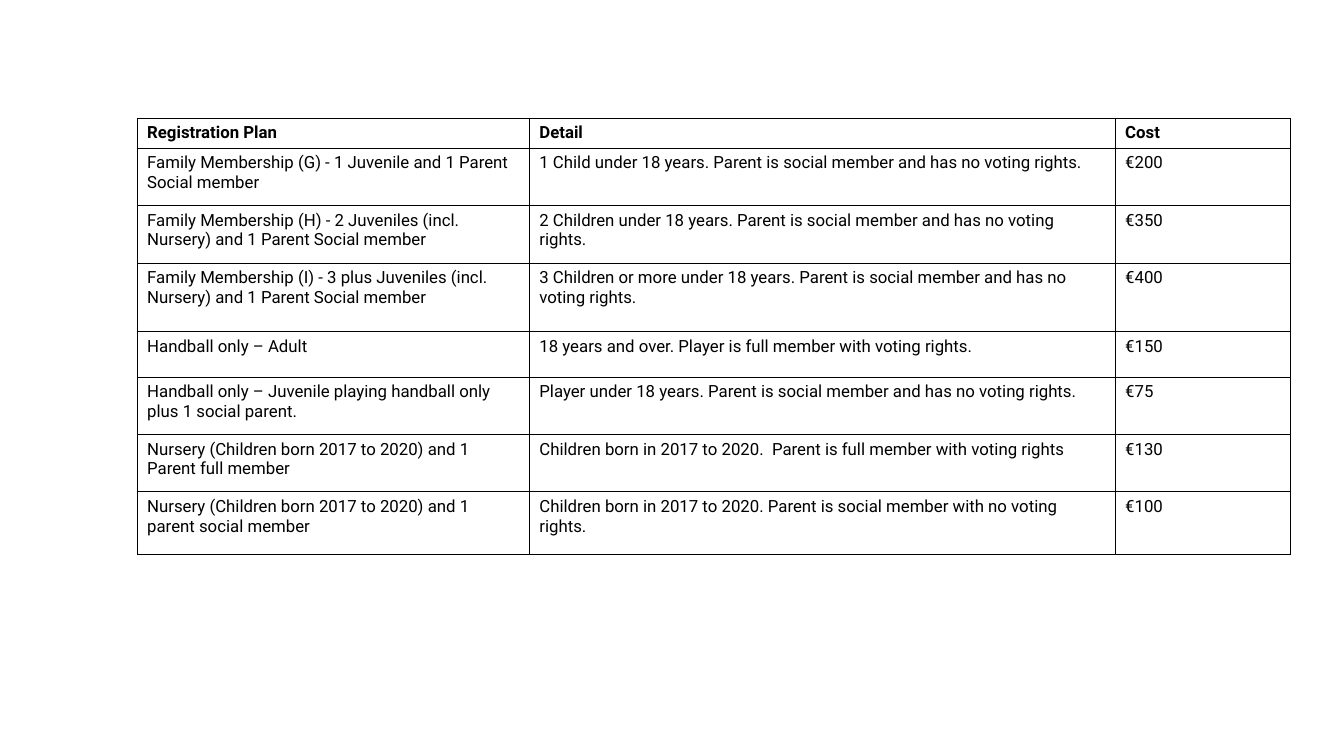
from pptx import Presentation
from pptx.dml.color import RGBColor
from pptx.oxml import parse_xml
from pptx.oxml.ns import nsdecls
from pptx.util import Inches, Pt

BLACK = RGBColor(0, 0, 0)
WHITE = RGBColor(255, 255, 255)
FONT = "Roboto"
EDGE = Pt(0.57)

WIDTHS = [3.89, 5.81, 1.74]
HEIGHTS = [0.3, 0.57, 0.57, 0.68, 0.45, 0.57, 0.57, 0.62]
PLANS = [
    ("Registration Plan", "Detail", "Cost"),
    ("Family Membership (G) - 1 Juvenile and 1 Parent Social member",
     "1 Child under 18 years. Parent is social member and has no voting rights.",
     "€200"),
    ("Family Membership (H) - 2 Juveniles (incl. Nursery) and 1 Parent Social member",
     "2 Children under 18 years. Parent is social member and has no voting rights.",
     "€350"),
    ("Family Membership (I) - 3 plus Juveniles (incl. Nursery) and 1 Parent Social member",
     "3 Children or more under 18 years. Parent is social member and has no voting rights.",
     "€400"),
    ("Handball only – Adult",
     "18 years and over. Player is full member with voting rights.",
     "€150"),
    ("Handball only – Juvenile playing handball only plus 1 social parent.",
     "Player under 18 years. Parent is social member and has no voting rights.",
     "€75"),
    ("Nursery (Children born 2017 to 2020) and 1 Parent full member",
     "Children born in 2017 to 2020.  Parent is full member with voting rights",
     "€130"),
    ("Nursery (Children born 2017 to 2020) and 1 parent social member",
     "Children born in 2017 to 2020. Parent is social member with no voting rights.",
     "€100"),
]


def add_edges(cell):
    # Borders must come before the fill in the cell properties
    props = cell._tc.get_or_add_tcPr()
    for pos, side in enumerate(("lnL", "lnR", "lnT", "lnB")):
        props.insert(pos, parse_xml(
            f'<a:{side} {nsdecls("a")} w="{EDGE}"><a:solidFill>'
            f'<a:srgbClr val="{BLACK}"/></a:solidFill></a:{side}>'))


def fill_cell(cell, text, bold):
    cell.fill.solid()
    cell.fill.fore_color.rgb = WHITE
    add_edges(cell)
    run = cell.text_frame.paragraphs[0].add_run()
    run.text = text
    font = run.font
    font.name, font.size, font.bold = FONT, Pt(12), bold
    font.color.rgb = BLACK


def add_plans(slide):
    frame = slide.shapes.add_table(
        len(PLANS), len(WIDTHS), Inches(1.36), Inches(1.17),
        Inches(sum(WIDTHS)), Inches(sum(HEIGHTS)))
    table = frame.table
    for col, width in zip(table.columns, WIDTHS):
        col.width = Inches(width)
    for row, height in zip(table.rows, HEIGHTS):
        row.height = Inches(height)
    # Bold header row, plain rows below
    for r, plan in enumerate(PLANS):
        for c, text in enumerate(plan):
            fill_cell(table.cell(r, c), text, r == 0)


def main():
    deck = Presentation()
    deck.slide_width = Inches(13.33)
    deck.slide_height = Inches(7.5)
    slide = deck.slides.add_slide(deck.slide_layouts[6])
    add_plans(slide)
    deck.save("out.pptx")


if __name__ == "__main__":
    main()
